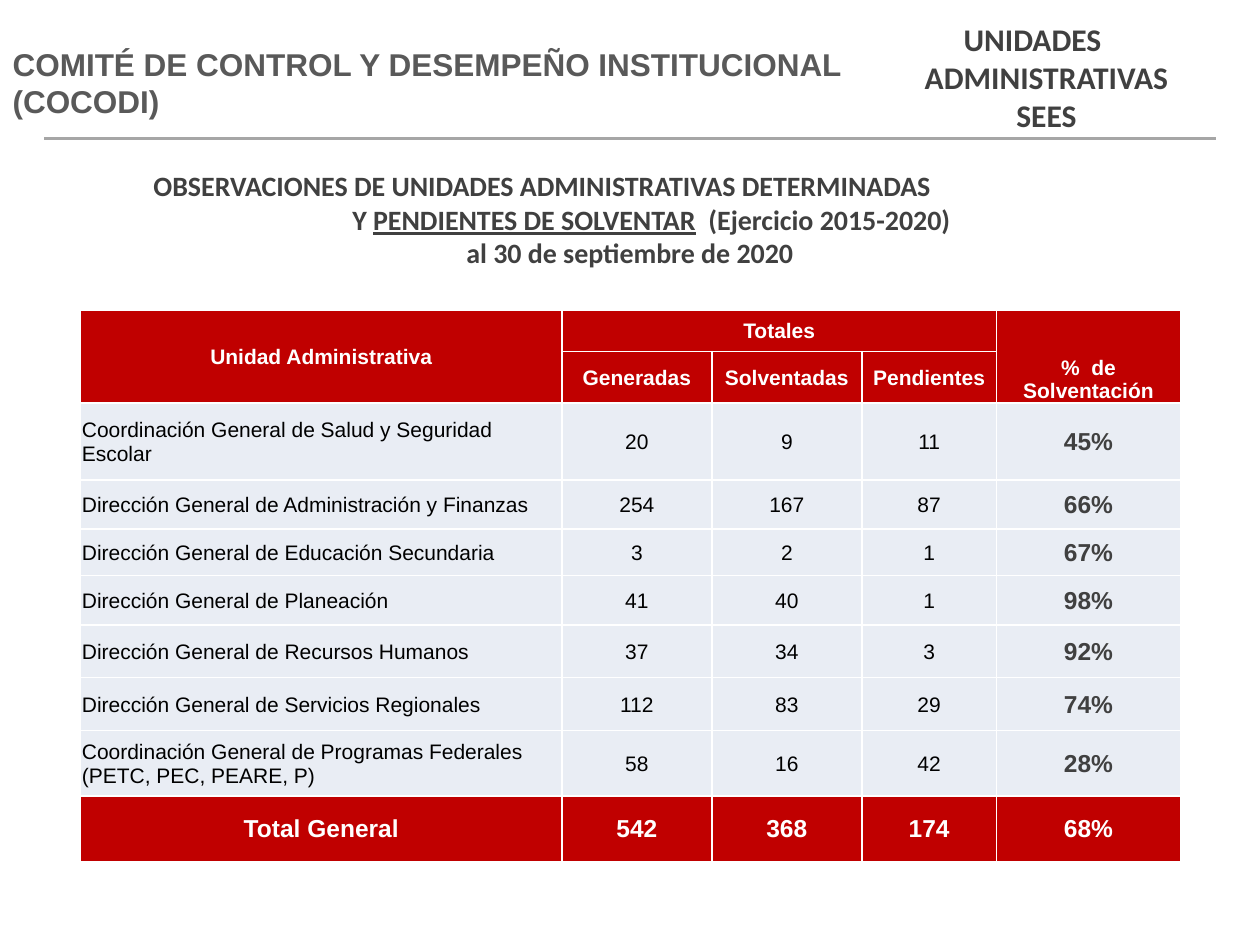
from lxml import etree
from pptx import Presentation
from pptx import util as u
from pptx.dml.color import RGBColor
from pptx.enum import shapes, text
from pptx.oxml.ns import qn

LEFT, MID = text.PP_ALIGN.LEFT, text.PP_ALIGN.CENTER
RED, PALE, WHITE, GRAY = "C00000", "E9EDF4", "FFFFFF", "404040"
COLS = [3.82, 1.19, 1.19, 1.07, 1.46]
ROWS = [0.33, 0.3, 0.61, 0.39, 0.37, 0.39, 0.42, 0.42, 0.52, 0.52]
HEADS = [
    ["Unidad Administrativa", "Totales", "", "", "%  de Solventación"],
    ["", "Generadas", "Solventadas", "Pendientes", ""],
]
UNITS = [
    ["Coordinación General de Salud y Seguridad Escolar", "20", "9", "11", "45%"],
    ["Dirección General de Administración y Finanzas", "254", "167", "87", "66%"],
    ["Dirección General de Educación Secundaria", "3", "2", "1", "67%"],
    ["Dirección General de Planeación", "41", "40", "1", "98%"],
    ["Dirección General de Recursos Humanos", "37", "34", "3", "92%"],
    ["Dirección General de Servicios Regionales", "112", "83", "29", "74%"],
    ["Coordinación General de Programas Federales (PETC, PEC, PEARE, P)",
     "58", "16", "42", "28%"],
]
TOTAL = ["Total General", "542", "368", "174", "68%"]


def color(code):
    return RGBColor.from_string(code)


def style(par, size, code, bold=True, face="Arial", align=MID):
    par.alignment = align
    for run in par.runs:
        font = run.font
        font.name, font.size, font.bold = face, u.Pt(size), bold
        font.color.rgb = color(code)


def add_title(slide, words):
    title = slide.shapes.title
    title.left, title.top = u.Inches(0), u.Inches(0)
    title.width, title.height = u.Inches(7.09), u.Inches(1.31)
    title.fill.solid()
    title.fill.fore_color.rgb = color(WHITE)
    frame = title.text_frame
    frame.text = words
    frame.word_wrap = True
    frame.vertical_anchor = text.MSO_ANCHOR.MIDDLE
    style(frame.paragraphs[0], 18, "595959", align=LEFT)


def add_text(slide, box, lines, size):
    frame = slide.shapes.add_textbox(*map(u.Inches, box)).text_frame
    frame.word_wrap = True
    for i, (words, align, indent) in enumerate(lines):
        par = frame.paragraphs[0] if i == 0 else frame.add_paragraph()
        for part in words:
            par.add_run().text = part
        style(par, size, GRAY, face="Calibri", align=align)
        if indent:
            par._p.get_or_add_pPr().set("marL", str(u.Inches(indent)))
    return frame


def add_rule(slide):
    rule = slide.shapes.add_connector(
        shapes.MSO_CONNECTOR.STRAIGHT, *map(u.Inches, (0.35, 1.1, 9.65, 1.1)))
    rule.line.color.rgb = color("A6A6A6")
    rule.line.width = u.Pt(1.5)
    etree.SubElement(rule._element.spPr, qn("a:effectLst"))


def set_edges(cell):
    props = cell._tc.get_or_add_tcPr()
    for i, side in enumerate(("lnL", "lnR", "lnT", "lnB")):
        edge = etree.Element(qn(f"a:{side}"), w=str(u.Pt(1)))
        fill = etree.SubElement(edge, qn("a:solidFill"))
        etree.SubElement(fill, qn("a:srgbClr"), val=WHITE)
        props.insert(i, edge)


def set_cell(cell, words, fill, **look):
    cell.text = words
    cell.vertical_anchor = text.MSO_ANCHOR.MIDDLE
    cell.margin_left = cell.margin_right = cell.margin_top = u.Inches(0.01)
    cell.margin_bottom = 0
    cell.fill.solid()
    cell.fill.fore_color.rgb = color(fill)
    set_edges(cell)
    style(cell.text_frame.paragraphs[0], **look)


def add_grid(slide):
    box = map(u.Inches, (0.64, 2.46, sum(COLS), sum(ROWS)))
    grid = slide.shapes.add_table(len(ROWS), len(COLS), *box).table
    grid.first_row = grid.horz_banding = False
    for col, width in zip(grid.columns, COLS):
        col.width = u.Inches(width)
    for row, height in zip(grid.rows, ROWS):
        row.height = u.Inches(height)
    last = len(ROWS) - 1
    for r, row in enumerate(HEADS + UNITS + [TOTAL]):
        for c, words in enumerate(row):
            cell = grid.cell(r, c)
            if r < 2 or r == last:
                set_cell(cell, words, RED, size=14 if r == last else 12, code=WHITE)
            elif c == 4:
                set_cell(cell, words, PALE, size=14, code=GRAY)
            else:
                set_cell(cell, words, PALE, size=12, code="000000", bold=False,
                         align=MID if c else LEFT)
    for start, end in (((0, 0), (1, 0)), ((0, 1), (0, 3)), ((0, 4), (1, 4))):
        grid.cell(*start).merge(grid.cell(*end))
    grid.cell(0, 4).vertical_anchor = text.MSO_ANCHOR.BOTTOM


def main():
    deck = Presentation()
    deck.slide_width, deck.slide_height = u.Inches(10), u.Inches(7.5)
    slide = deck.slides.add_slide(deck.slide_layouts[5])
    add_title(slide, "COMITÉ DE CONTROL Y DESEMPEÑO INSTITUCIONAL (COCODI)")
    frame = add_text(slide, (1.12, 1.29, 7.76, 0.91), [
        (["OBSERVACIONES DE UNIDADES ADMINISTRATIVAS DETERMINADAS"], LEFT, 0),
        (["Y ", "PENDIENTES DE SOLVENTAR", "  (Ejercicio 2015-2020)"], MID, 0.34),
        (["al 30 de septiembre de 2020"], MID, 0),
    ], 16)
    frame.paragraphs[1].runs[1].font.underline = True
    add_text(slide, (6.61, 0.11, 3.39, 1.01), [
        (["UNIDADES"], LEFT, 0.94),
        (["ADMINISTRATIVAS"], MID, 0),
        (["SEES"], MID, 0),
    ], 18)
    add_grid(slide)
    add_rule(slide)
    deck.save("out.pptx")


if __name__ == "__main__":
    main()
